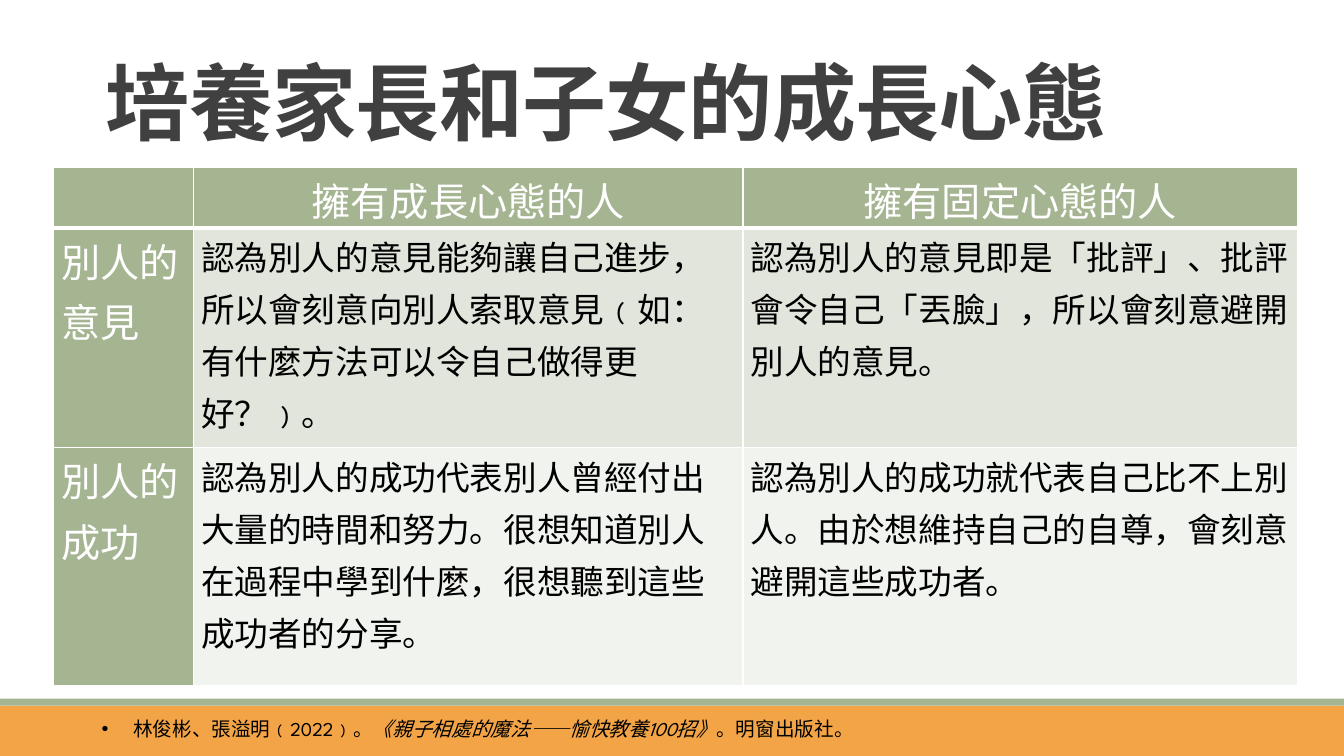
"""Build a slide comparing growth and fixed mindsets in a three-column table."""
from lxml.etree import SubElement
from pptx import Presentation
from pptx.dml.color import RGBColor
from pptx.enum.shapes import MSO_SHAPE as Shape
from pptx.enum.text import MSO_ANCHOR as Anchor, MSO_AUTO_SIZE as AutoSize, PP_ALIGN as Align
from pptx.oxml.ns import qn
from pptx.util import Pt

TITLE = "培養家長和子女的成長心態"
ROWS = [
    ("", "擁有成長心態的人", "擁有固定心態的人"),
    ("別人的意見",
     "認為別人的意見能夠讓自己進步，所以會刻意向別人索取意見﹙如：有什麼方法可以令自己做得更好？﹚。",
     "認為別人的意見即是「批評」、批評會令自己「丟臉」，所以會刻意避開別人的意見。"),
    ("別人的成功",
     "認為別人的成功代表別人曾經付出大量的時間和努力。很想知道別人在過程中學到什麼，很想聽到這些成功者的分享。",
     "認為別人的成功就代表自己比不上別人。由於想維持自己的自尊，會刻意避開這些成功者。"),
]
SOURCE = [
    ("林俊彬、張溢明﹙2022﹚。", False),
    ("《親子相處的魔法——愉快教養100招》", True),
    ("。明窗出版社。", False),
]
COLORS = {"orange": "F3A447", "green": "A5B592", "band1": "E1E5DC", "band2": "F0F3EE",
          "title": "404040", "white": "FFFFFF", "black": "000000"}
CJK, LATIN = "Noto Sans CJK SC", "League Spartan"
COLUMN_WIDTHS = [100.1, 392.4, 396]
ROW_HEIGHTS = [31, 157, 170]
BARS = [("orange", 504, 36), ("green", 499, 5)]
HEADING = {"name": CJK, "size": Pt(28)}
BODY = {"name": CJK, "size": Pt(24)}
TITLE_FONT = {"name": CJK, "size": Pt(60), "bold": True}
SOURCE_FONT = {"name": LATIN, "size": Pt(14)}
CELL_MARGINS = {"margin_left": Pt(5.4), "margin_right": Pt(5.4), "margin_top": 0, "margin_bottom": 0}


def rgb(name):
    return RGBColor.from_string(COLORS[name])


def apply(target, values):
    for name, value in values.items():
        setattr(target, name, value)


def add_span(para, text, font, color):
    span = para.add_run()
    span.text = text
    apply(span.font, font)
    span.font.color.rgb = rgb(color)
    SubElement(span.font._element, qn("a:ea"), typeface=CJK)
    return span


def add_borders(cell, row):
    properties = cell._tc.get_or_add_tcPr()
    for side in "LRTB":
        width = 3 if (row, side) in {(0, "B"), (1, "T")} else 1
        line = SubElement(properties, qn(f"a:ln{side}"), w=str(Pt(width)))
        fill = SubElement(line, qn("a:solidFill"))
        SubElement(fill, qn("a:srgbClr"), val=COLORS["white"])


def add_bars(page):
    for color, top, height in BARS:
        bar = page.shapes.add_shape(Shape.RECTANGLE, 0, Pt(top), Pt(960), Pt(height))
        bar.shadow.inherit = False
        bar.fill.solid()
        bar.fill.fore_color.rgb = rgb(color)
        bar.line.fill.background()


def add_title(page):
    title = page.shapes.title
    apply(title, {"left": Pt(68.4), "top": Pt(7.2), "width": Pt(828), "height": Pt(104.4)})
    apply(title.text_frame, {"vertical_anchor": Anchor.BOTTOM, "auto_size": AutoSize.NONE})
    para = title.text_frame.paragraphs[0]
    apply(para, {"alignment": Align.LEFT, "line_spacing": 0.85})
    span = add_span(para, TITLE, TITLE_FONT, "title")
    span.font._element.set("spc", "-50")


def add_comparison(page):
    frame = page.shapes.add_table(len(ROWS), len(COLUMN_WIDTHS), Pt(38.2), Pt(119.5),
                                  Pt(sum(COLUMN_WIDTHS)), Pt(sum(ROW_HEIGHTS)))
    table = frame.table
    apply(table, {"first_row": False, "horz_banding": False})
    for column, width in zip(table.columns, COLUMN_WIDTHS):
        column.width = Pt(width)
    for r, (row, height, texts) in enumerate(zip(table.rows, ROW_HEIGHTS, ROWS)):
        row.height = Pt(height)
        for c, (cell, text) in enumerate(zip(row.cells, texts)):
            heading = r == 0 or c == 0
            apply(cell, CELL_MARGINS)
            add_borders(cell, r)
            cell.fill.solid()
            cell.fill.fore_color.rgb = rgb("green" if heading else f"band{r}")
            para = cell.text_frame.paragraphs[0]
            apply(para, {"alignment": Align.LEFT if r else Align.CENTER,
                         "line_spacing": 1.07, "space_after": Pt(8)})
            if text:
                add_span(para, text, HEADING if heading else BODY, "white" if heading else "black")


def add_source(page):
    box = page.shapes.add_textbox(Pt(65.5), Pt(508.3), Pt(864.7), Pt(41))
    box.text_frame.word_wrap = True
    para = box.text_frame.paragraphs[0]
    properties = para._p.get_or_add_pPr()
    properties.set("marL", str(Pt(22.5)))
    properties.set("indent", str(Pt(-22.5)))
    SubElement(properties, qn("a:buFont"), typeface="Arial")
    SubElement(properties, qn("a:buChar"), char="•")
    for text, italic in SOURCE:
        add_span(para, text, {**SOURCE_FONT, "italic": italic}, "black")


def main():
    deck = Presentation()
    apply(deck, {"slide_width": Pt(960), "slide_height": Pt(540)})
    page = deck.slides.add_slide(deck.slide_layouts[5])
    add_bars(page)
    add_title(page)
    add_comparison(page)
    add_source(page)
    deck.save("out.pptx")


if __name__ == "__main__":
    main()
